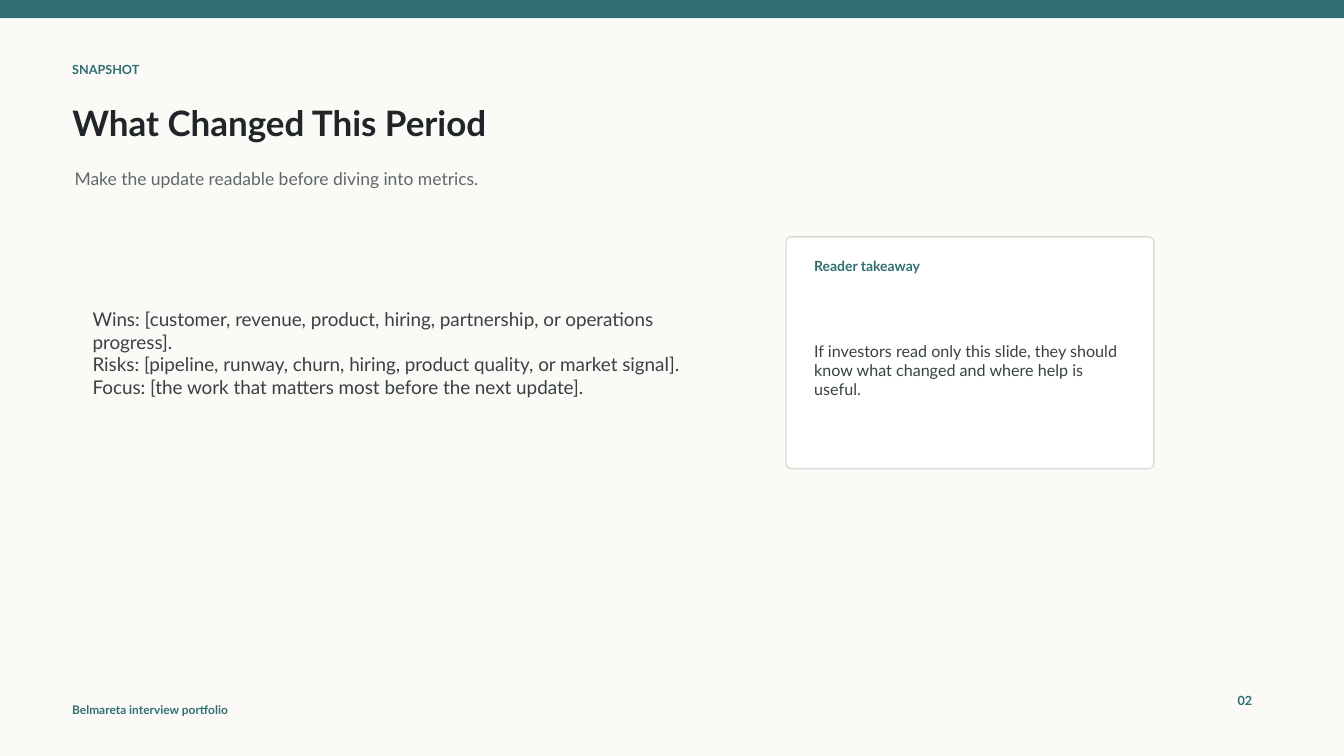
from pptx import Presentation
from pptx.dml.color import RGBColor
from pptx.enum.shapes import MSO_SHAPE as SHAPE
from pptx.enum.text import MSO_ANCHOR as ANCHOR, MSO_AUTO_SIZE as AUTO, PP_ALIGN as ALIGN
from pptx.util import Cm, Pt
from lxml.etree import SubElement
from pptx.oxml.ns import qn

FONT = "Lato"
COLORS = {
    "paper": "FBFAF6",
    "teal": "2F6F73",
    "ink": "1F2528",
    "muted": "5E686B",
    "body": "384144",
    "card": "FFFFFF",
    "border": "D8DDD7",
}
MARGIN = 1.57
CARD_LEFT, CARD_TOP, CARD_WIDTH, CARD_HEIGHT = 19.81, 5.97, 9.27, 5.84
CARD_PAD = 0.46


def rgb(name):
    return RGBColor.from_string(COLORS[name])


def place(sp, left, top, width, height):
    sp.left, sp.top, sp.width, sp.height = Cm(left), Cm(top), Cm(width), Cm(height)


def write(sp, text, size, color, bold=False):
    tf = sp.text_frame
    tf.text = text
    tf.word_wrap = True
    tf.auto_size = AUTO.NONE
    tf.vertical_anchor = ANCHOR.MIDDLE
    for p in tf.paragraphs:
        p.alignment = ALIGN.LEFT
        p.space_before = Pt(0)
        for r in p.runs:
            r.font.name = FONT
            r.font.size = Pt(size)
            r.font.bold = bold
            r.font.color.rgb = rgb(color)


def add_text(s, box, text, size, color="teal", bold=True):
    sp = s.shapes.add_textbox(*map(Cm, box))
    write(sp, text, size, color, bold)


def add_panel(s, kind, box, fill, border=None):
    sp = s.shapes.add_shape(kind, *map(Cm, box))
    sp.shadow.inherit = False
    sp.fill.solid()
    sp.fill.fore_color.rgb = rgb(fill)
    if border:
        sp.line.color.rgb = rgb(border)
        sp.line.width = Pt(1)
    else:
        sp.line.fill.background()
    return sp


def fill_title(s, text):
    sp = s.shapes.title
    place(sp, MARGIN, 2.39, 24.89, 1.4)
    write(sp, text, 25, "ink", True)


def fill_body(s, lines):
    sp = s.placeholders[1]
    place(sp, 2.08, 5.59, 16.64, 6.6)
    write(sp, "\n".join(lines), 13.5, "body")
    for p in sp.text_frame.paragraphs:
        pPr = p._p.get_or_add_pPr()
        pPr.set("marL", "0")
        pPr.set("indent", "0")
        SubElement(pPr, qn("a:buNone"))


def add_card(s, heading, text):
    card = add_panel(s, SHAPE.ROUNDED_RECTANGLE,
                     (CARD_LEFT, CARD_TOP, CARD_WIDTH, CARD_HEIGHT), "card", "border")
    card.adjustments[0] = 0.022
    left, width = CARD_LEFT + CARD_PAD, CARD_WIDTH - 2 * CARD_PAD
    add_text(s, (left, 6.38, width, 0.64), heading, 10)
    add_text(s, (left, 7.19, width, 4.27), text, 11.5, "body", False)


def main():
    prs = Presentation()
    prs.slide_width, prs.slide_height = Cm(33.87), Cm(19.05)
    s = prs.slides.add_slide(prs.slide_layouts[1])
    s.background.fill.solid()
    s.background.fill.fore_color.rgb = rgb("paper")

    add_panel(s, SHAPE.RECTANGLE, (0, 0, 33.87, 0.46), "teal")
    add_text(s, (MARGIN, 1.47, 12.19, 0.56), "SNAPSHOT", 9)
    fill_title(s, "What Changed This Period")
    add_text(s, (1.63, 3.96, 27.43, 1.07),
             "Make the update readable before diving into metrics.", 12.5, "muted", False)
    fill_body(s, [
        "Wins: [customer, revenue, product, hiring, partnership, or operations progress].",
        "Risks: [pipeline, runway, churn, hiring, product quality, or market signal].",
        "Focus: [the work that matters most before the next update].",
    ])
    add_card(s, "Reader takeaway",
             "If investors read only this slide, they should know what changed "
             "and where help is useful.")
    add_text(s, (MARGIN, 17.63, 7.62, 0.51), "Belmareta interview portfolio", 8.5)
    add_text(s, (30.94, 17.32, 1.27, 0.64), "02", 9)
    prs.save("out.pptx")


if __name__ == "__main__":
    main()
